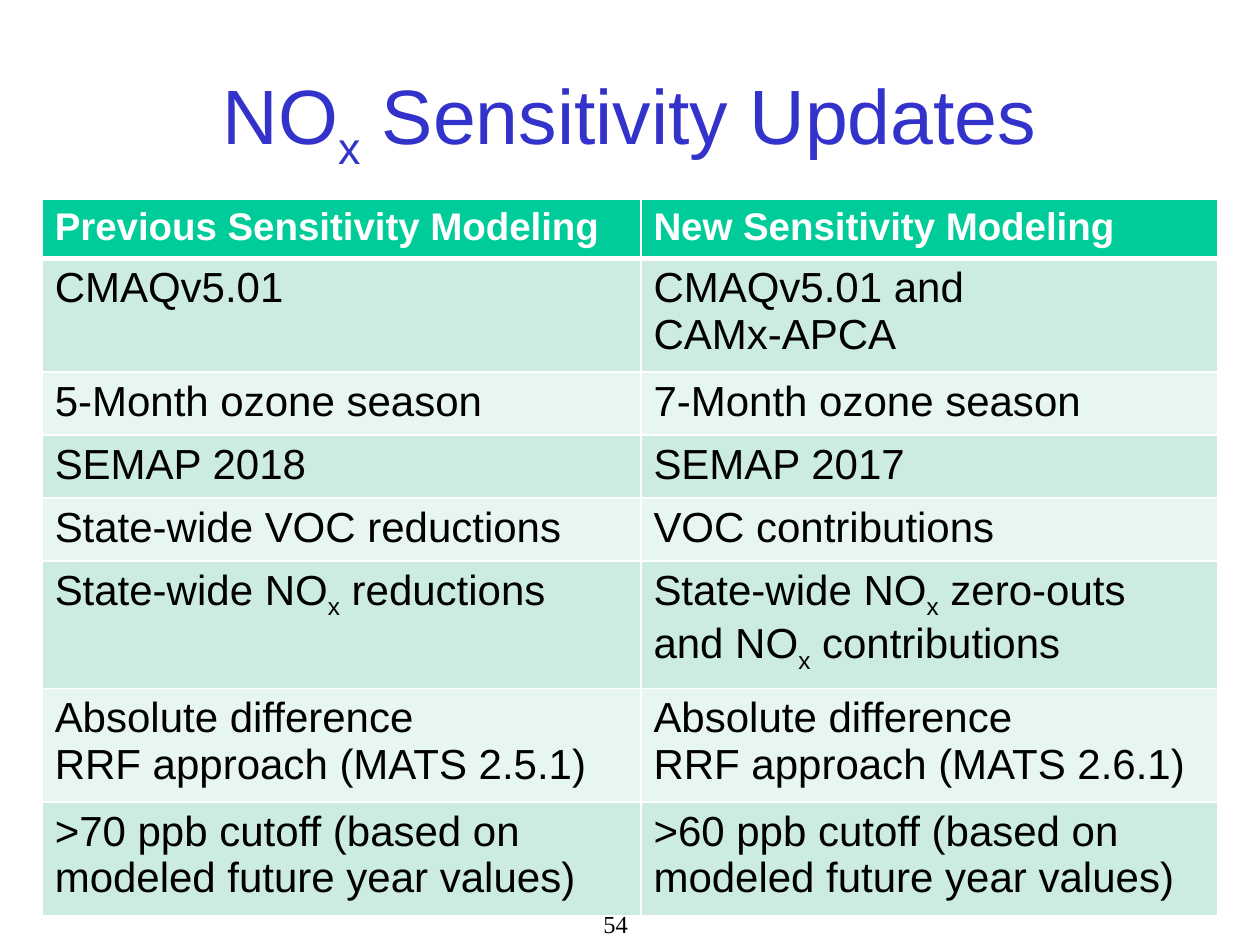
import pptx
import pptx.dml.color
import pptx.enum.text
import pptx.oxml
import pptx.oxml.ns
import pptx.util

Cm = pptx.util.Cm
Pt = pptx.util.Pt
Align = pptx.enum.text.PP_ALIGN
Anchor = pptx.enum.text.MSO_ANCHOR

ROWS = [
    ("Previous Sensitivity Modeling", "New Sensitivity Modeling"),
    ("CMAQv5.01", "CMAQv5.01 and\nCAMx-APCA"),
    ("5-Month ozone season", "7-Month ozone season"),
    ("SEMAP 2018", "SEMAP 2017"),
    ("State-wide VOC reductions", "VOC contributions"),
    ("State-wide NO~x~ reductions",
     "State-wide NO~x~ zero-outs and NO~x~ contributions"),
    ("Absolute difference\nRRF approach (MATS 2.5.1)",
     "Absolute difference\nRRF approach (MATS 2.6.1)"),
    (">70 ppb cutoff (based on modeled future year values)",
     ">60 ppb cutoff (based on modeled future year values)"),
]
ROW_HEIGHTS = [1.19, 2.14, 1.27, 1.27, 1.27, 2.41, 2.14, 2.29]
COLUMN_WIDTHS = [12.07, 11.63]


def color(hex_string):
    return pptx.dml.color.RGBColor.from_string(hex_string)


def write_text(frame, text, size=24, font="Arial", ink="000000", bold=False,
               align=Align.LEFT):
    for index, line in enumerate(text.split("\n")):
        paragraph = frame.add_paragraph() if index else frame.paragraphs[0]
        paragraph.alignment = align
        for position, piece in enumerate(line.split("~")):
            run = paragraph.add_run()
            run.text = piece
            run.font.size = Pt(size)
            run.font.name = font
            run.font.bold = bold
            run.font.color.rgb = color(ink)
            if position % 2:
                run.font._element.set("baseline", "-25000")


class SlideBuilder:
    header_fill = "00CC99"
    band_fills = ["E7F6EF", "CBECDE"]
    border = "FFFFFF"

    def __init__(self, presentation):
        self.slide = presentation.slides.add_slide(presentation.slide_layouts[6])

    def text_box(self, left, top, width, height, text, anchor=Anchor.TOP, **style):
        shape = self.slide.shapes.add_textbox(Cm(left), Cm(top), Cm(width), Cm(height))
        shape.text_frame.word_wrap = True
        shape.text_frame.vertical_anchor = anchor
        write_text(shape.text_frame, text, **style)

    def set_borders(self, cell, top, bottom):
        properties = cell._tc.get_or_add_tcPr()
        for side, width in zip("LRTB", (1, 1, top, bottom)):
            properties.append(pptx.oxml.parse_xml(
                f'<a:ln{side} {pptx.oxml.ns.nsdecls("a")} w="{Pt(width)}">'
                f'<a:solidFill><a:srgbClr val="{self.border}"/></a:solidFill>'
                f'</a:ln{side}>'))

    def table(self, left, top, rows, widths, heights):
        table = self.slide.shapes.add_table(
            len(rows), len(widths), Cm(left), Cm(top),
            Cm(sum(widths)), Cm(sum(heights))).table
        for column, width in zip(table.columns, widths):
            column.width = Cm(width)
        for index, (texts, height) in enumerate(zip(rows, heights)):
            header = index == 0
            table.rows[index].height = Cm(height)
            style = dict(size=22, ink="FFFFFF", bold=True) if header else {}
            fill = self.header_fill if header else self.band_fills[index % 2]
            for cell, text in zip(table.rows[index].cells, texts):
                self.set_borders(cell, 3 if index == 1 else 1, 3 if header else 1)
                cell.fill.solid()
                cell.fill.fore_color.rgb = color(fill)
                write_text(cell.text_frame, text, **style)


def main():
    presentation = pptx.Presentation()
    presentation.slide_width = Cm(25.4)
    presentation.slide_height = Cm(19.05)
    builder = SlideBuilder(presentation)
    builder.text_box(10.8, 18.21, 2.11, 0.64, "54", size=14,
                     font="Times New Roman", align=Align.RIGHT)
    builder.text_box(1.9, 0.84, 21.6, 3.18, "NO~x~ Sensitivity Updates",
                     anchor=Anchor.MIDDLE, size=44, ink="3333CC", align=Align.CENTER)
    builder.table(0.85, 4.02, ROWS, COLUMN_WIDTHS, ROW_HEIGHTS)
    presentation.save("out.pptx")


if __name__ == "__main__":
    main()
